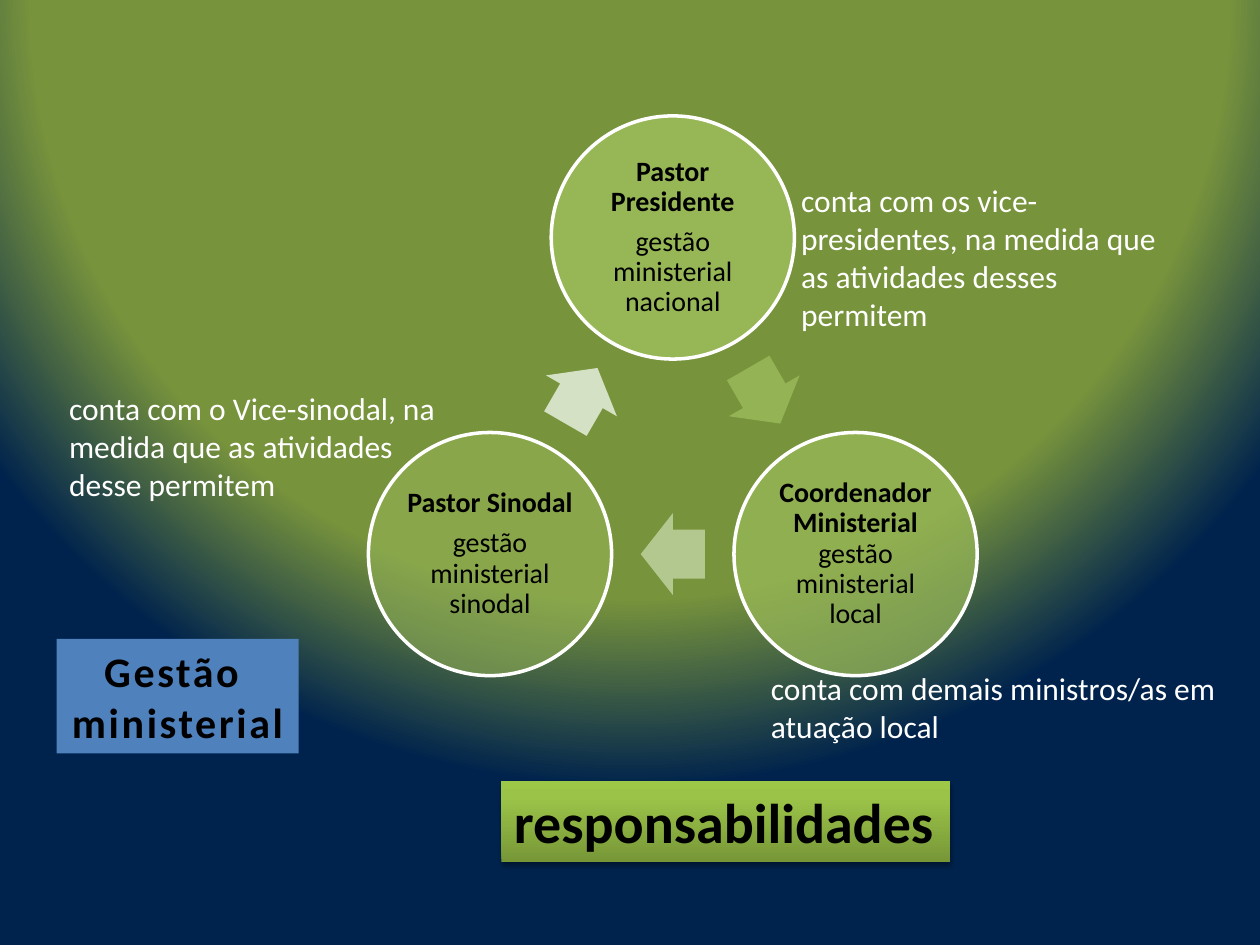
import math

from lxml import etree
from pptx import Presentation
from pptx import util as u
from pptx.dml.color import RGBColor
from pptx.enum import shapes, text
from pptx.oxml import parse_xml
from pptx.oxml.ns import nsdecls, qn

WHITE = RGBColor(0xFF, 0xFF, 0xFF)
BLACK = RGBColor(0x00, 0x00, 0x00)
NAVY = RGBColor(0x00, 0x23, 0x4D)
OLIVE = RGBColor(0x77, 0x93, 0x3C)
GREEN = RGBColor(0x9B, 0xBB, 0x59)
BLUE = RGBColor(0x4F, 0x81, 0xBD)
BANNER_DARK = RGBColor(0x77, 0x97, 0x37)
BANNER_MID = RGBColor(0x9B, 0xC3, 0x48)
BANNER_LIGHT = RGBColor(0x9D, 0xC7, 0x46)
ARROW_COLOURS = [RGBColor(0x94, 0xB3, 0x55), RGBColor(0xB3, 0xC8, 0x8E),
                 RGBColor(0xD5, 0xE1, 0xC4)]

COLUMNS, ROWS = 100, 75
CYCLE_CENTRE = (53.4, 35.6)
CYCLE_RADIUS = 16.75
CIRCLE_SIZE = 19.3
ARROW_SIZE = (5.1, 6.5)


class SlideBuilder:
    """Places styled elements on a slide grid of 100 columns by 75 rows."""

    font = "Calibri"

    def __init__(self, presentation):
        self.cell_width = presentation.slide_width / COLUMNS
        self.cell_height = presentation.slide_height / ROWS
        self.slide = presentation.slides.add_slide(presentation.slide_layouts[6])

    def box(self, left, top, width, height):
        return (round(left * self.cell_width), round(top * self.cell_height),
                round(width * self.cell_width), round(height * self.cell_height))

    def gradient(self, fill, owner, stops, direction):
        """Fill with (percent, colour) stops; direction is an a:lin or a:path element."""
        fill.gradient()
        old = owner.find(".//" + qn("a:gradFill"))
        stop_xml = "".join(
            f'<a:gs pos="{percent * 1000}"><a:srgbClr val="{colour}"/></a:gs>'
            for percent, colour in stops)
        old.getparent().replace(old, parse_xml(
            f'<a:gradFill {nsdecls("a")} rotWithShape="1">'
            f"<a:gsLst>{stop_xml}</a:gsLst>{direction}</a:gradFill>"))

    def background(self):
        self.gradient(
            self.slide.background.fill, self.slide.element,
            [(0, OLIVE), (53, OLIVE), (76, OLIVE), (100, NAVY)],
            '<a:path path="circle">'
            '<a:fillToRect l="50000" t="-80000" r="50000" b="180000"/></a:path>')

    def shape(self, kind, box, colour):
        shape = self.slide.shapes.add_shape(kind, *self.box(*box))
        shape.shadow.inherit = False
        shape.fill.solid()
        shape.fill.fore_color.rgb = colour
        shape.line.fill.background()
        return shape

    def add_text(self, shape, paragraphs, size, colour, align=None, spacing=None,
                 after=None, tracking=None):
        """Each paragraph is a list of (text, bold) runs."""
        frame = shape.text_frame
        for index, runs in enumerate(paragraphs):
            paragraph = frame.add_paragraph() if index else frame.paragraphs[0]
            paragraph.alignment = align
            paragraph.line_spacing = spacing
            paragraph.space_after = after
            for words, bold in runs:
                run = paragraph.add_run()
                run.text = words
                run.font.name = self.font
                run.font.size = u.Pt(size)
                run.font.bold = bold
                run.font.color.rgb = colour
                if tracking:
                    properties = run._r.get_or_add_rPr()
                    properties.set("spc", str(round(tracking * 100)))

    def circle(self, centre, opacity, paragraphs):
        left, top = (value - CIRCLE_SIZE / 2 for value in centre)
        circle = self.shape(shapes.MSO_SHAPE.OVAL,
                            (left, top, CIRCLE_SIZE, CIRCLE_SIZE), GREEN)
        colour = circle.element.spPr.find(qn("a:solidFill"))[0]
        etree.SubElement(colour, qn("a:alpha"), val=str(opacity * 1000))
        circle.line.color.rgb = WHITE
        circle.line.width = u.Pt(2)
        frame = circle.text_frame
        frame.word_wrap = True
        frame.vertical_anchor = text.MSO_ANCHOR.MIDDLE
        frame.margin_left = frame.margin_right = u.Inches(0.02)
        frame.margin_top = frame.margin_bottom = u.Inches(0.02)
        self.add_text(circle, paragraphs, 16, BLACK, text.PP_ALIGN.CENTER, 0.9, u.Pt(5.6))

    def arrow(self, centre, rotation, colour):
        width, height = ARROW_SIZE
        arrow = self.shape(
            shapes.MSO_SHAPE.RIGHT_ARROW,
            (centre[0] - width / 2, centre[1] - height / 2, width, height), colour)
        arrow.adjustments[0], arrow.adjustments[1] = 0.6, 0.5
        arrow.rotation = rotation

    def note(self, box, words):
        note = self.slide.shapes.add_textbox(*self.box(*box))
        note.text_frame.word_wrap = True
        note.text_frame.auto_size = text.MSO_AUTO_SIZE.SHAPE_TO_FIT_TEXT
        self.add_text(note, [[(words, False)]], 18, WHITE)

    def label(self, box, colour, lines, size, align, tracking=None):
        label = self.shape(shapes.MSO_SHAPE.RECTANGLE, box, colour)
        label.text_frame.word_wrap = False
        label.text_frame.auto_size = text.MSO_AUTO_SIZE.SHAPE_TO_FIT_TEXT
        self.add_text(label, [[(line, True)] for line in lines], size, BLACK, align,
                      tracking=tracking)
        return label

    def banner(self, box, words):
        banner = self.label(box, BANNER_MID, [words], 32, text.PP_ALIGN.LEFT)
        self.gradient(banner.fill, banner.element,
                      [(0, BANNER_DARK), (80, BANNER_MID), (100, BANNER_LIGHT)],
                      '<a:lin ang="16200000" scaled="0"/>')
        effects = banner.element.spPr.find(qn("a:effectLst"))
        effects.append(parse_xml(
            f'<a:outerShdw {nsdecls("a")} blurRad="{u.Pt(3.1)}" dist="{u.Pt(1.8)}" '
            f'dir="5400000" rotWithShape="0"><a:srgbClr val="{BLACK}">'
            '<a:alpha val="35000"/></a:srgbClr></a:outerShdw>'))


def around_cycle(radius, degrees):
    angle = math.radians(degrees)
    return (CYCLE_CENTRE[0] + radius * math.cos(angle),
            CYCLE_CENTRE[1] + radius * math.sin(angle))


def main():
    presentation = Presentation()
    presentation.slide_width = u.Inches(10)
    presentation.slide_height = u.Inches(7.5)
    builder = SlideBuilder(presentation)
    builder.background()

    roles = [
        (90, [[("Pastor Presidente", True)], [("gestão ministerial nacional", False)]]),
        (70, [[("Coordenador Ministerial ", True), ("gestão ministerial local", False)]]),
        (50, [[("Pastor Sinodal", True)], [("gestão ministerial sinodal", False)]]),
    ]
    for index, (opacity, paragraphs) in enumerate(roles):
        turn = 120 * index
        builder.circle(around_cycle(CYCLE_RADIUS, turn - 90), opacity, paragraphs)
        builder.arrow(around_cycle(CYCLE_RADIUS / 2, turn - 30), turn + 60,
                      ARROW_COLOURS[index])

    builder.note((62.6, 13.9, 32.1, 13.1),
                 "conta com os vice-presidentes, na medida que as atividades desses permitem")
    builder.note((4.5, 30.4, 32.1, 10.1),
                 "conta com o Vice-sinodal, na medida que as atividades desse permitem")
    builder.note((60.2, 52.6, 39.8, 7.1),
                 "conta com demais ministros/as em atuação local")
    builder.label((4.5, 50.7, 19.2, 9.1), BLUE, ["Gestão ", "ministerial"], 24,
                  text.PP_ALIGN.CENTER, tracking=1.5)
    builder.banner((39.8, 62, 35.6, 6.4), "responsabilidades")
    presentation.save("out.pptx")


if __name__ == "__main__":
    main()
